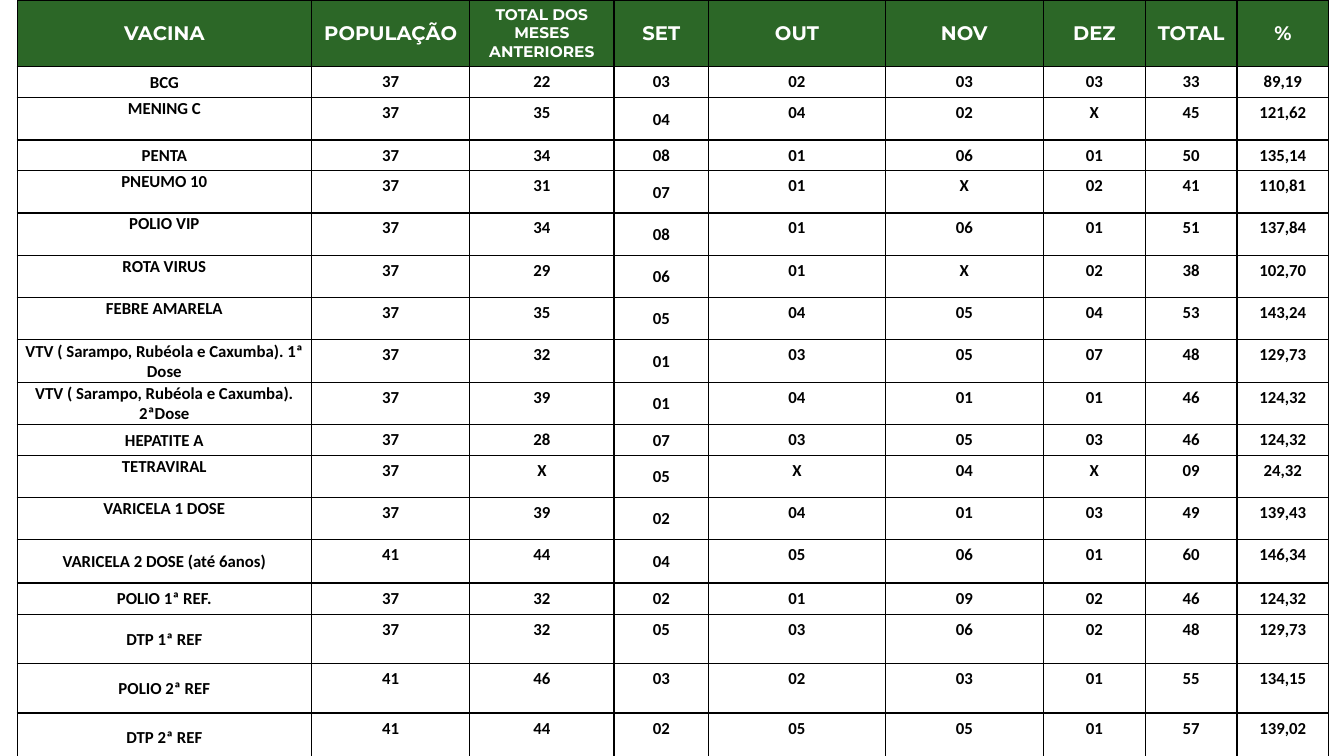
from pptx import Presentation
from pptx.dml.color import RGBColor
from pptx.enum.text import MSO_ANCHOR as Anchor, PP_ALIGN as Align
from pptx.oxml.xmlchemy import OxmlElement as Element
from pptx.util import Inches, Pt

GREEN, WHITE, BLACK = "2C6727", "FFFFFF", "000000"

HEADINGS = ("VACINA", "POPULAÇÃO", "TOTAL DOS MESES ANTERIORES",
            "SET", "OUT", "NOV", "DEZ", "TOTAL", "%")
COLUMN_WIDTHS = (2.92, 1.57, 1.43, 0.94, 1.75, 1.57, 1.01, 0.91, 0.91)
HEADER_HEIGHT = 0.66

# Row height, anchor of the vaccine name, anchor of the SET value, values
TOP, MIDDLE = Anchor.TOP, Anchor.MIDDLE
VACCINES = [
    (0.31, MIDDLE, TOP, ("BCG", "37", "22", "03", "02", "03", "03", "33", "89,19")),
    (0.42, TOP, MIDDLE, ("MENING C", "37", "35", "04", "04", "02", "X", "45", "121,62")),
    (0.30, MIDDLE, MIDDLE, ("PENTA", "37", "34", "08", "01", "06", "01", "50", "135,14")),
    (0.42, TOP, MIDDLE, ("PNEUMO 10", "37", "31", "07", "01", "X", "02", "41", "110,81")),
    (0.42, TOP, MIDDLE, ("POLIO VIP", "37", "34", "08", "01", "06", "01", "51", "137,84")),
    (0.42, TOP, MIDDLE, ("ROTA VIRUS", "37", "29", "06", "01", "X", "02", "38", "102,70")),
    (0.42, TOP, MIDDLE, ("FEBRE AMARELA", "37", "35", "05", "04", "05", "04", "53", "143,24")),
    (0.42, MIDDLE, MIDDLE, ("VTV ( Sarampo, Rubéola e Caxumba). 1ª Dose",
                            "37", "32", "01", "03", "05", "07", "48", "129,73")),
    (0.42, MIDDLE, MIDDLE, ("VTV ( Sarampo, Rubéola e Caxumba). 2ªDose",
                            "37", "39", "01", "04", "01", "01", "46", "124,32")),
    (0.30, MIDDLE, MIDDLE, ("HEPATITE A", "37", "28", "07", "03", "05", "03", "46", "124,32")),
    (0.42, TOP, MIDDLE, ("TETRAVIRAL", "37", "X", "05", "X", "04", "X", "09", "24,32")),
    (0.42, TOP, MIDDLE, ("VARICELA 1 DOSE", "37", "39", "02", "04", "01", "03", "49", "139,43")),
    (0.43, MIDDLE, MIDDLE, ("VARICELA 2 DOSE (até 6anos)",
                            "41", "44", "04", "05", "06", "01", "60", "146,34")),
    (0.31, MIDDLE, TOP, ("POLIO 1ª REF.", "37", "32", "02", "01", "09", "02", "46", "124,32")),
    (0.49, MIDDLE, TOP, ("DTP 1ª REF", "37", "32", "05", "03", "06", "02", "48", "129,73")),
    (0.49, MIDDLE, TOP, ("POLIO 2ª REF", "41", "46", "03", "02", "03", "01", "55", "134,15")),
    (0.49, MIDDLE, TOP, ("DTP 2ª REF", "41", "44", "02", "05", "05", "01", "57", "139,02")),
]

WIDE_MARGINS = (0.1, 0.05, 0.1, 0.05)
TIGHT_MARGINS = (0.01, 0.01, 0.01, 0)
HEADER_FONT = {"name": "Montserrat", "size": Pt(14), "bold": True}
BODY_FONT = {"name": "Calibri", "size": Pt(12), "bold": True}


def color(hex_string):
    return RGBColor.from_string(hex_string)


def add_borders(cell):
    properties = cell._tc.get_or_add_tcPr()
    for side in ("lnL", "lnR", "lnT", "lnB"):
        line = Element(f"a:{side}")
        line.set("w", str(Pt(1)))
        fill = Element("a:solidFill")
        ink = Element("a:srgbClr")
        ink.set("val", BLACK)
        fill.append(ink)
        line.append(fill)
        properties.append(line)


def fill_cell(cell, text, font_values, font_color, anchor, margins, background=None):
    add_borders(cell)
    if background:
        cell.fill.solid()
        cell.fill.fore_color.rgb = color(background)
    else:
        cell.fill.background()
    cell.vertical_anchor = anchor
    for side, margin in zip(("left", "top", "right", "bottom"), margins):
        setattr(cell, f"margin_{side}", Inches(margin))
    paragraph = cell.text_frame.paragraphs[0]
    paragraph.alignment = Align.CENTER
    run = paragraph.add_run()
    run.text = text
    for attribute, value in font_values.items():
        setattr(run.font, attribute, value)
    run.font.color.rgb = color(font_color)


def main():
    deck = Presentation()
    deck.slide_width, deck.slide_height = Inches(13.33), Inches(7.5)
    slide = deck.slides.add_slide(deck.slide_layouts[6])

    heights = [HEADER_HEIGHT] + [vaccine[0] for vaccine in VACCINES]
    coverage = slide.shapes.add_table(
        len(heights), len(HEADINGS), Inches(0.17), Inches(0),
        Inches(sum(COLUMN_WIDTHS)), Inches(sum(heights))).table
    coverage.first_row = coverage.horz_banding = False
    for column, width in zip(coverage.columns, COLUMN_WIDTHS):
        column.width = Inches(width)
    for row, height in zip(coverage.rows, heights):
        row.height = Inches(height)

    for col, heading in enumerate(HEADINGS):
        size = Pt(11) if heading.startswith("TOTAL DOS") else Pt(14)
        fill_cell(coverage.cell(0, col), heading, {**HEADER_FONT, "size": size},
                  WHITE, MIDDLE, WIDE_MARGINS, GREEN)

    set_col = HEADINGS.index("SET")
    for row, (_, name_anchor, set_anchor, values) in enumerate(VACCINES, start=1):
        anchors = {0: name_anchor, set_col: set_anchor}
        for col, value in enumerate(values):
            anchor = anchors.get(col, TOP)
            tight = col == 0 or anchor == MIDDLE
            fill_cell(coverage.cell(row, col), value, BODY_FONT, BLACK, anchor,
                      TIGHT_MARGINS if tight else WIDE_MARGINS)

    deck.save("out.pptx")


if __name__ == "__main__":
    main()
